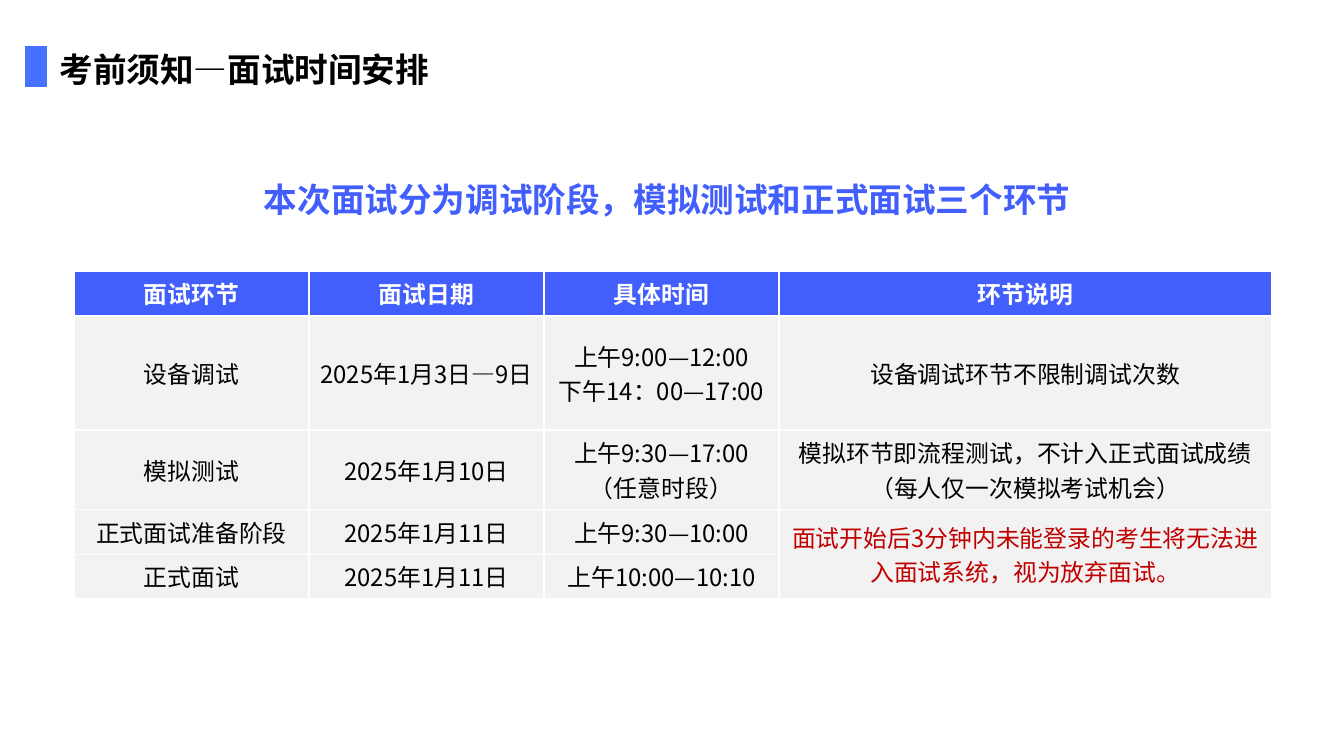
from dataclasses import dataclass

from lxml.etree import SubElement
from pptx import Presentation
from pptx.dml.color import RGBColor as RGB
from pptx.enum.shapes import MSO_SHAPE as Kind
from pptx.enum.text import MSO_ANCHOR as Anchor, MSO_AUTO_SIZE as Fit, PP_ALIGN as Align
from pptx.oxml.ns import qn
from pptx.util import Pt


@dataclass(frozen=True)
class Theme:
    """Colours, fonts and type sizes of the slide."""
    bar: RGB = RGB(0x46, 0x70, 0xFE)
    blue: RGB = RGB(0x42, 0x5E, 0xFD)
    grey: RGB = RGB(0xF2, 0xF2, 0xF2)
    red: RGB = RGB(0xC0, 0x00, 0x00)
    ink: RGB = RGB(0, 0, 0)
    white: RGB = RGB(0xFF, 0xFF, 0xFF)
    sans: str = "Noto Sans CJK SC"
    latin: str = "Arial"
    head: int = 24
    body: int = 17


THEME = Theme()
HEADS = ["面试环节", "面试日期", "具体时间", "环节说明"]
STAGES = [
    ["设备调试", "2025年1月3日—9日", "上午9:00—12:00\n下午14：00—17:00", "设备调试环节不限制调试次数"],
    ["模拟测试", "2025年1月10日", "上午9:30—17:00（任意时段）",
     "模拟环节即流程测试，不计入正式面试成绩（每人仅一次模拟考试机会）"],
    ["正式面试准备阶段", "2025年1月11日", "上午9:30—10:00",
     "面试开始后3分钟内未能登录的考生将无法进入面试系统，视为放弃面试。"],
    ["正式面试", "2025年1月11日", "上午10:00—10:10", ""],
]


def write(frame, text, size, color, bold, align=Align.LEFT, face=THEME.sans):
    """Fill a text frame and style each paragraph."""
    frame.text = text
    for para in frame.paragraphs:
        para.alignment = align
        font = para.font
        font.name, font.size, font.bold = face, Pt(size), bold
        font.color.rgb = color
        if face == THEME.sans:
            SubElement(para._p.pPr.find(qn("a:defRPr")), qn("a:ea"), typeface=face)


def place(shape, left, top, width, height):
    """Set the box of a shape in points."""
    shape.left, shape.top = Pt(left), Pt(top)
    shape.width, shape.height = Pt(width), Pt(height)


def add_bar(slide):
    """Draw the block beside the title."""
    bar = slide.shapes.add_shape(Kind.RECTANGLE, Pt(18), Pt(33.1), Pt(15.1), Pt(28.8))
    bar.shadow.inherit = False
    bar.fill.solid()
    bar.fill.fore_color.rgb = bar.line.color.rgb = THEME.bar
    bar.line.width = Pt(1)


def add_title(slide, text):
    """Place and fill the title."""
    title = slide.shapes.title
    place(title, 35.3, 28.8, 452.2, 41)
    frame = title.text_frame
    frame.auto_size = Fit.NONE
    frame.vertical_anchor = Anchor.MIDDLE
    write(frame, text, THEME.head, THEME.ink, True)


def add_lead(slide, text):
    """Add the line above the table."""
    box = slide.shapes.add_textbox(Pt(181.4), Pt(124.6), Pt(596.2), Pt(36))
    frame = box.text_frame
    frame.word_wrap = True
    frame.auto_size = Fit.SHAPE_TO_FIT_TEXT
    write(frame, text, THEME.head, THEME.blue, True, face=THEME.latin)


def fill_cell(cell, text, fill, color, bold):
    """Fill and style one table cell."""
    cell.fill.solid()
    cell.fill.fore_color.rgb = fill
    cell.vertical_anchor = Anchor.MIDDLE
    write(cell.text_frame, text, THEME.body, color, bold, Align.CENTER)


def add_plan(slide):
    """Add the timetable of interview stages."""
    rows = [HEADS, *STAGES]
    shape = slide.shapes.add_table(len(rows), len(HEADS), Pt(52.8), Pt(193.7), Pt(855.4), Pt(206.6))
    table = shape.table
    for col, width in zip(table.columns, [167.9] * 3 + [351.7]):
        col.width = Pt(width)
    for row in table.rows:
        row.height = Pt(30.2)
    for r, texts in enumerate(rows):
        for c, text in enumerate(texts):
            fill = THEME.grey if r else THEME.blue
            color = THEME.ink if r else THEME.white
            if (r, c) == (3, 3):
                color = THEME.red
            fill_cell(table.cell(r, c), text, fill, color, r == 0)
    table.cell(3, 3).merge(table.cell(4, 3))
    shape.height = Pt(206.6)


def main():
    """Build and save the slide."""
    deck = Presentation()
    deck.slide_width, deck.slide_height = Pt(960), Pt(540)
    slide = deck.slides.add_slide(deck.slide_layouts.get_by_name("Title Only"))
    add_bar(slide)
    add_title(slide, "考前须知—面试时间安排")
    add_plan(slide)
    add_lead(slide, "本次面试分为调试阶段，模拟测试和正式面试三个环节")
    deck.save("out.pptx")


if __name__ == "__main__":
    main()
